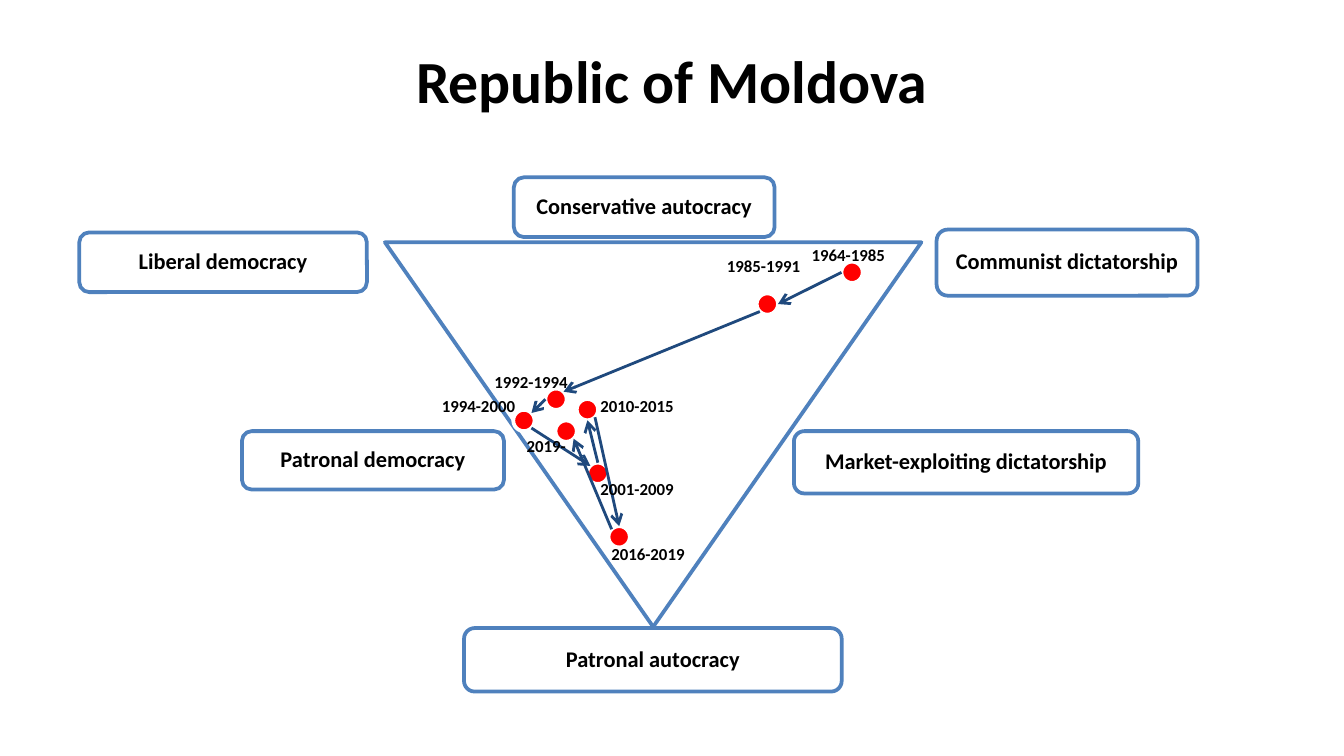
from lxml import etree
from pptx import Presentation
from pptx.dml.color import RGBColor
from pptx.enum.shapes import MSO_CONNECTOR, MSO_SHAPE
from pptx.enum.text import MSO_ANCHOR, MSO_AUTO_SIZE, PP_ALIGN
from pptx.oxml.ns import qn
from pptx.util import Pt

CENTER, LEFT = PP_ALIGN.CENTER, PP_ALIGN.LEFT
MIDDLE, TOP = MSO_ANCHOR.MIDDLE, MSO_ANCHOR.TOP
STRAIGHT = MSO_CONNECTOR.STRAIGHT
TRIANGLE = MSO_SHAPE.ISOSCELES_TRIANGLE
ROUNDED, OVAL = MSO_SHAPE.ROUNDED_RECTANGLE, MSO_SHAPE.OVAL

BLUE, NAVY, RED, WHITE, BLACK = "4F81BD", "1F497D", "FF0000", "FFFFFF", "000000"
DOT_SIZE = 11.4
DIAGONAL = 0.707

# Regime type: left, top, width, height
REGIMES = {
    "Communist dictatorship": (501.8, 123, 139.8, 35.4),
    "Liberal democracy": (42.5, 124.5, 154.1, 32),
    "Patronal autocracy": (248.6, 336.5, 202.3, 34),
    "Conservative autocracy": (275.3, 95, 139.7, 32),
    "Market-exploiting dictatorship": (425.3, 231, 184.5, 33.4),
    "Patronal democracy": (129.6, 231, 140.4, 31.3),
}

# Period: dot left and top, label left and top
PERIODS = {
    "1964-1985": (450.8, 140.2, 427.7, 127.4),
    "1985-1991": (405.4, 157.2, 382.3, 133.2),
    "1992-1994": (292.2, 208.2, 257.8, 195.8),
    "1994-2000": (275, 219.6, 229.6, 208.2),
    "2001-2009": (314.6, 247.9, 314.6, 252.9),
    "2010-2015": (309, 213.8, 314.6, 208.2),
    "2016-2019": (326, 281.9, 320.4, 287.5),
    "2019-": (297.6, 225.3, 275, 229.8),
}

# Points on a dot's rim, as factors of its radius
RIM = {
    "top": (0, -1), "bottom": (0, 1), "left": (-1, 0), "right": (1, 0),
    "top left": (-DIAGONAL, -DIAGONAL), "top right": (DIAGONAL, -DIAGONAL),
    "bottom left": (-DIAGONAL, DIAGONAL), "bottom right": (DIAGONAL, DIAGONAL),
}

# Rim points where the arrow from each period to the next starts and ends
TRANSITIONS = [
    ("left", "right"),
    ("bottom left", "top right"),
    ("left", "top right"),
    ("bottom right", "top left"),
    ("top", "bottom"),
    ("bottom right", "top"),
    ("top left", "bottom right"),
]


def color(hex_value):
    return RGBColor.from_string(hex_value)


def set_attributes(target, values):
    for name, value in values.items():
        setattr(target, name, value)


def write_text(shape, text, size, alignment, anchor):
    frame = shape.text_frame
    set_attributes(frame, {"word_wrap": True, "vertical_anchor": anchor})
    paragraph = frame.paragraphs[0]
    paragraph.alignment = alignment
    run = paragraph.add_run()
    run.text = text
    set_attributes(run.font, {"name": "Calibri", "size": Pt(size), "bold": True})
    run.font.color.rgb = color(BLACK)
    return frame


def add_outlined_shape(slide, kind, box, line, fill=None):
    shape = slide.shapes.add_shape(kind, *map(Pt, box))
    shape.shadow.inherit = False
    shape.line.color.rgb = color(line)
    shape.line.width = Pt(2)
    if fill:
        shape.fill.solid()
        shape.fill.fore_color.rgb = color(fill)
    else:
        shape.fill.background()
    return shape


def add_title(slide, text):
    title = slide.shapes.title
    set_attributes(title, {"left": Pt(0), "top": Pt(15.1),
                           "width": Pt(720), "height": Pt(55.4)})
    write_text(title, text, 32, CENTER, MIDDLE)


def add_regime(slide, name, box):
    shape = add_outlined_shape(slide, ROUNDED, box, BLUE, WHITE)
    fill_color = shape.fill._xPr.find(qn("a:solidFill"))[0]
    etree.SubElement(fill_color, qn("a:alpha"), val="90000")
    frame = write_text(shape, name, 12, CENTER, MIDDLE)
    frame.paragraphs[0].line_spacing = 0.9
    for side in ("left", "top", "right", "bottom"):
        setattr(frame, f"margin_{side}", Pt(3.6))


def add_label(slide, text, left, top):
    label = slide.shapes.add_textbox(Pt(left), Pt(top), Pt(73.4), Pt(18))
    frame = write_text(label, text, 9, LEFT, TOP)
    frame.auto_size = MSO_AUTO_SIZE.SHAPE_TO_FIT_TEXT


def rim_point(period, side):
    return [Pt(corner + DOT_SIZE / 2 * (1 + factor))
            for corner, factor in zip(PERIODS[period], RIM[side])]


def add_arrow(slide, start, end):
    connector = slide.shapes.add_connector(STRAIGHT, *start, *end)
    connector.line.color.rgb = color(NAVY)
    connector.line.width = Pt(1.5)
    etree.SubElement(connector.line._get_or_add_ln(), qn("a:tailEnd"), type="arrow")
    etree.SubElement(connector._element.spPr, qn("a:effectLst"))


def main():
    presentation = Presentation()
    set_attributes(presentation, {"slide_width": Pt(720), "slide_height": Pt(405)})
    slide = presentation.slides.add_slide(presentation.slide_layouts[5])
    add_title(slide, "Republic of Moldova")

    triangle = add_outlined_shape(slide, TRIANGLE, (206.2, 129.8, 287.4, 206), BLUE)
    triangle.rotation = 180
    for name, box in REGIMES.items():
        add_regime(slide, name, box)

    for left, top, *_ in PERIODS.values():
        add_outlined_shape(slide, OVAL, (left, top, DOT_SIZE, DOT_SIZE), WHITE, RED)
    periods = list(PERIODS)
    for earlier, later, (start, end) in zip(periods, periods[1:], TRANSITIONS):
        add_arrow(slide, rim_point(earlier, start), rim_point(later, end))
    for period, (*_, left, top) in PERIODS.items():
        add_label(slide, period, left, top)

    presentation.save("out.pptx")


if __name__ == "__main__":
    main()
